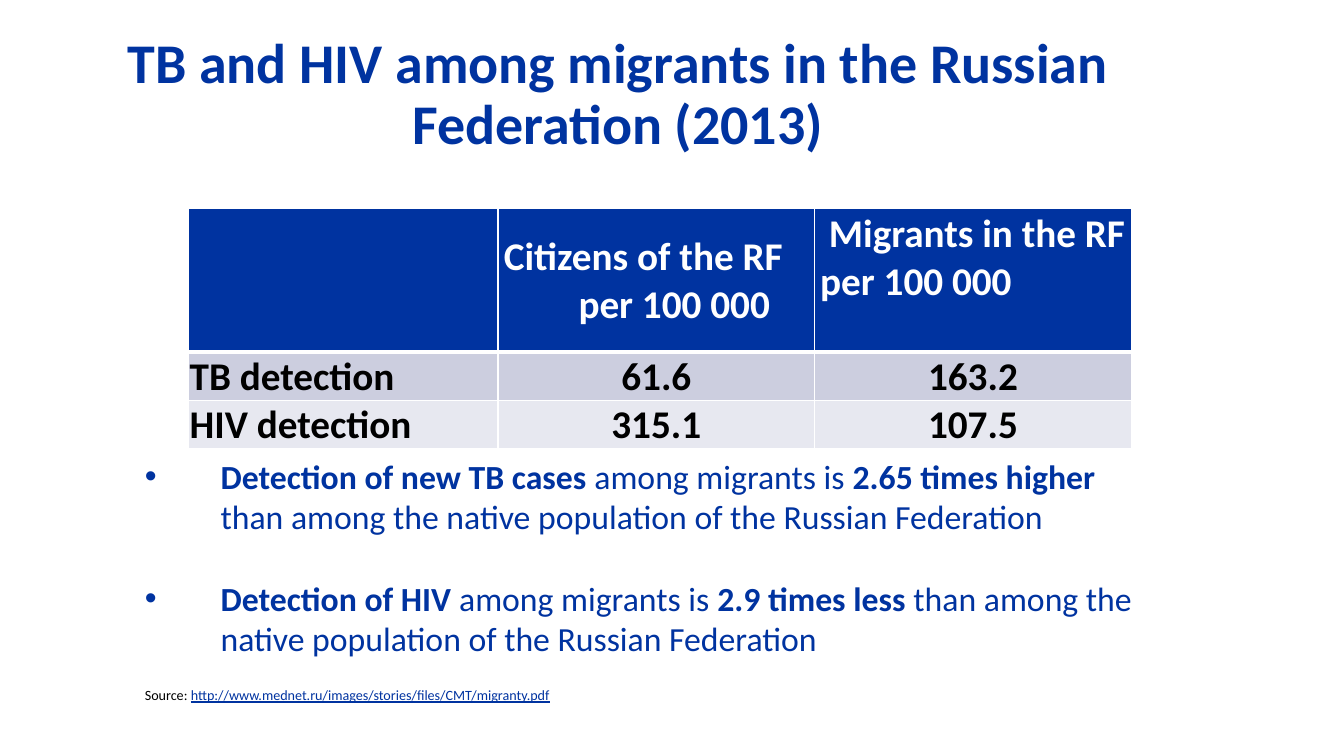
from dataclasses import dataclass

from lxml.etree import SubElement
from pptx import Presentation
from pptx.dml.color import RGBColor
from pptx.enum.text import MSO_ANCHOR, PP_ALIGN
from pptx.oxml.ns import qn
from pptx.util import Cm, Pt

COLORS = {
    "blue": "0033A0",
    "white": "FFFFFF",
    "black": "000000",
    "band_dark": "CCCEDF",
    "band_light": "E7E8F0",
}
FONT = "Calibri"


@dataclass
class Span:
    text: str
    size: float
    color: str = "blue"
    bold: bool = False
    underline: bool = False


@dataclass
class Line:
    spans: list[Span]
    align: PP_ALIGN = PP_ALIGN.LEFT
    left_cm: float = 0
    right_cm: float = 0
    bullet: bool = False
    before: float = 0
    spacing: float = 1.0


@dataclass
class Entry:
    lines: list[Line]
    fill: str
    anchor: MSO_ANCHOR = MSO_ANCHOR.MIDDLE
    bottom_border: float = 1


def write_lines(frame, lines: list[Line]) -> None:
    for index, line in enumerate(lines):
        paragraph = frame.paragraphs[0] if index == 0 else frame.add_paragraph()
        paragraph.alignment = line.align
        paragraph.line_spacing = line.spacing
        if line.before:
            paragraph.space_before = Pt(line.before)
        properties = paragraph._p.get_or_add_pPr()
        properties.set("marL", str(Cm(line.left_cm)))
        properties.set("marR", str(Cm(line.right_cm)))
        if line.bullet:
            properties.set("indent", str(-Cm(line.left_cm)))
            SubElement(properties, qn("a:buFont"), typeface="Arial")
            SubElement(properties, qn("a:buChar"), char="•")
        for span in line.spans:
            run = paragraph.add_run()
            run.text = span.text
            run.font.name = FONT
            run.font.size = Pt(span.size)
            run.font.bold = span.bold
            run.font.underline = span.underline
            run.font.color.rgb = RGBColor.from_string(COLORS[span.color])


def add_text(slide, left: float, top: float, width: float, height: float,
             lines: list[Line]):
    frame = slide.shapes.add_textbox(Cm(left), Cm(top), Cm(width), Cm(height)).text_frame
    frame.word_wrap = True
    frame.vertical_anchor = MSO_ANCHOR.MIDDLE
    write_lines(frame, lines)
    return frame


def fill_cell(cell, entry: Entry, top_border: float) -> None:
    cell.margin_left = cell.margin_right = cell.margin_top = Cm(0.03)
    cell.margin_bottom = 0
    cell.vertical_anchor = entry.anchor
    write_lines(cell.text_frame, entry.lines)
    # Borders come before the fill in the cell properties
    widths = {"a:lnL": 1, "a:lnR": 1, "a:lnT": top_border, "a:lnB": entry.bottom_border}
    for side, width in widths.items():
        border = SubElement(cell._tc.get_or_add_tcPr(), qn(side), w=str(Pt(width)))
        solid = SubElement(border, qn("a:solidFill"))
        SubElement(solid, qn("a:srgbClr"), val=COLORS["white"])
    cell.fill.solid()
    cell.fill.fore_color.rgb = RGBColor.from_string(COLORS[entry.fill])


def header(lines: list[Line], anchor: MSO_ANCHOR = MSO_ANCHOR.MIDDLE) -> Entry:
    return Entry(lines, "blue", anchor, bottom_border=3)


def header_line(text: str, align: PP_ALIGN = PP_ALIGN.CENTER,
                left_cm: float = 0, right_cm: float = 0) -> Line:
    return Line([Span(text, 28, "white", bold=True)], align, left_cm, right_cm)


def detection_row(label: str, citizens: str, migrants: str, fill: str) -> list[Entry]:
    aligns = (PP_ALIGN.LEFT, PP_ALIGN.CENTER, PP_ALIGN.CENTER)
    return [Entry([Line([Span(text, 28, "black", bold=True)], align)], fill)
            for text, align in zip((label, citizens, migrants), aligns)]


def finding(subject: str, middle: str, ratio: str, before: float = 0) -> Line:
    size = 24.1
    ending = "than among the native population of the Russian Federation"
    return Line([Span(subject, size, bold=True), Span(middle, size),
                 Span(ratio, size, bold=True), Span(ending, size)],
                left_cm=1.91, bullet=True, before=before)


DETECTION = [
    [
        header([]),
        header([header_line("Citizens of the RF", right_cm=0.66),
                header_line("per 100 000", left_cm=0.9)]),
        header([header_line("Migrants in the RF", left_cm=0.2),
                header_line("per 100 000", PP_ALIGN.LEFT, left_cm=0.11)],
               MSO_ANCHOR.TOP),
    ],
    detection_row("TB detection", "61.6", "163.2", "band_dark"),
    detection_row("HIV detection", "315.1", "107.5", "band_light"),
]
COLUMN_WIDTHS = (7.8, 7.98, 7.98)
ROW_HEIGHTS = (3.61, 1.22, 1.22)


def main() -> None:
    presentation = Presentation()
    presentation.slide_width, presentation.slide_height = Cm(33.87), Cm(19.05)
    slide = presentation.slides.add_slide(presentation.slide_layouts[6])

    # Title
    title = "ТB and HIV among migrants in the Russian Federation (2013)"
    add_text(slide, 1.22, 1.17, 28.7, 2.49,
             [Line([Span(title, 40, bold=True)], PP_ALIGN.CENTER, spacing=0.9)])

    # Detection rates
    rates = slide.shapes.add_table(
        len(ROW_HEIGHTS), len(COLUMN_WIDTHS), Cm(4.75), Cm(5.26),
        Cm(sum(COLUMN_WIDTHS)), Cm(sum(ROW_HEIGHTS))).table
    for column, width in zip(rates.columns, COLUMN_WIDTHS):
        column.width = Cm(width)
    for row, height in zip(rates.rows, ROW_HEIGHTS):
        row.height = Cm(height)
    for r, entries in enumerate(DETECTION):
        for c, entry in enumerate(entries):
            top_border = DETECTION[r - 1][c].bottom_border if r else 1
            fill_cell(rates.cell(r, c), entry, top_border)

    # Findings and source
    address = "http://www.mednet.ru/images/stories/files/CMT/migranty.pdf"
    findings = add_text(slide, 3.4, 11.25, 26.06, 7.14, [
        finding("Detection of new TB cases ", "among migrants is ", "2.65 times higher "),
        finding("Detection of HIV ", "among migrants is ", "2.9 times less ", before=29.4),
        Line([Span("Source: ", 10.1, "black"), Span(address, 10.1, underline=True)],
             before=19.8),
    ])
    findings.margin_bottom = Cm(0.56)

    presentation.save("out.pptx")


if __name__ == "__main__":
    main()
